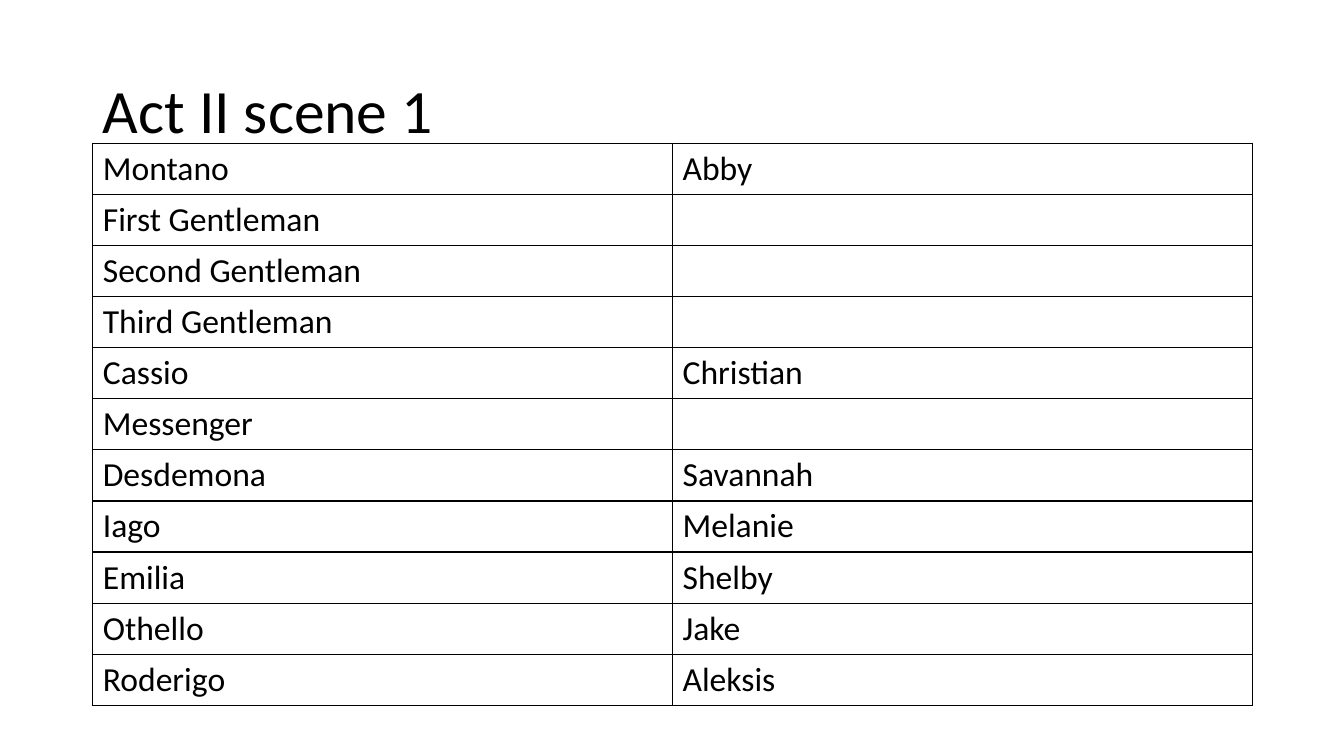
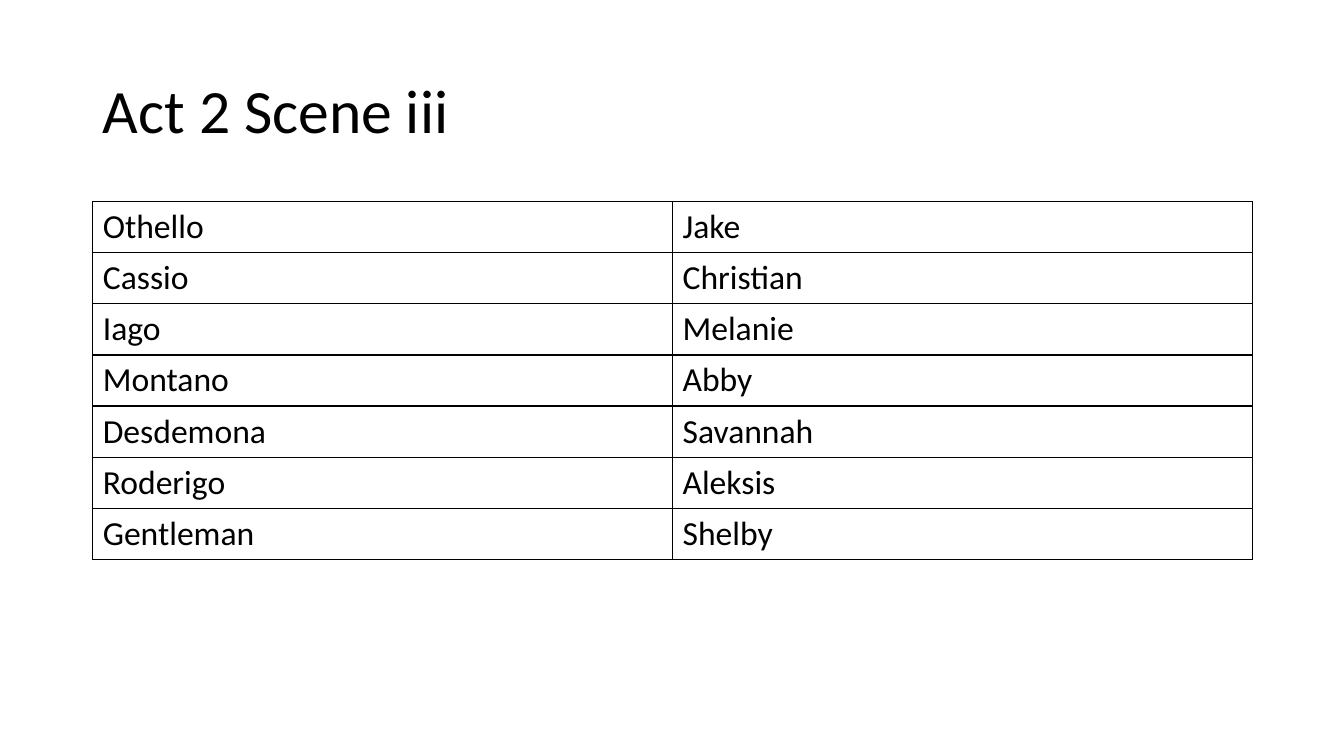
from lxml.etree import SubElement
from pptx import Presentation
from pptx.dml.color import RGBColor
from pptx.enum.text import MSO_ANCHOR, MSO_AUTO_SIZE, PP_ALIGN
from pptx.oxml.ns import qn
from pptx.util import Inches, Pt

HUES = {"ink": "000000", "paper": "FFFFFF"}
FONT = "Calibri"
WIDE, HIGH = 13.33, 7.5
LEFT, SPAN = 0.92, 11.5
ROW = 0.5

CAST = {
    "Othello": "Jake",
    "Cassio": "Christian",
    "Iago": "Melanie",
    "Montano": "Abby",
    "Desdemona": "Savannah",
    "Roderigo": "Aleksis",
    "Emilia": "Shelby",
    "Gentleman": "Shelby",
}

SCENES = [
    ("Act II scene 1", 1.42,
     ["Montano", "First Gentleman", "Second Gentleman", "Third Gentleman",
      "Cassio", "Messenger", "Desdemona", "Iago", "Emilia", "Othello",
      "Roderigo"]),
    ("Act 2 Scene iii", 2,
     ["Othello", "Cassio", "Iago", "Montano", "Desdemona", "Roderigo",
      "Gentleman"]),
]


def write(frame, text, size=24, hue="ink", lead=1.0):
    para = frame.paragraphs[0]
    para.alignment = PP_ALIGN.LEFT
    para.line_spacing = lead
    run = para.add_run()
    run.text = text
    run.font.size = Pt(size)
    run.font.name = FONT
    run.font.color.rgb = RGBColor.from_string(HUES[hue])


def border(cell, hue="ink", width=1):
    props = cell._tc.get_or_add_tcPr()
    for side in ("lnL", "lnR", "lnT", "lnB"):
        line = SubElement(props, qn(f"a:{side}"), w=str(Pt(width)))
        fill = SubElement(line, qn("a:solidFill"))
        SubElement(fill, qn("a:srgbClr"), val=HUES[hue])


def head(slide, text, box):
    title = slide.shapes.title
    title.left, title.top, title.width, title.height = map(Inches, box)
    frame = title.text_frame
    frame.word_wrap = True
    frame.auto_size = MSO_AUTO_SIZE.NONE
    frame.vertical_anchor = MSO_ANCHOR.MIDDLE
    write(frame, text, size=44, lead=0.9)


def roster(slide, roles, box):
    table = slide.shapes.add_table(len(roles), 2, *map(Inches, box)).table
    table.first_row = table.horz_banding = False
    for row, role in enumerate(roles):
        for col, text in enumerate((role, CAST.get(role))):
            cell = table.cell(row, col)
            border(cell)
            cell.fill.solid()
            cell.fill.fore_color.rgb = RGBColor.from_string(HUES["paper"])
            if text:
                write(cell.text_frame, text)


def scene(deck, name, top, roles):
    slide = deck.slides.add_slide(deck.slide_layouts[5])
    head(slide, name, (LEFT, 0.4, SPAN, 1.45))
    roster(slide, roles, (LEFT, top, SPAN, ROW * len(roles)))


def main():
    deck = Presentation()
    deck.slide_width, deck.slide_height = Inches(WIDE), Inches(HIGH)
    for name, top, roles in SCENES:
        scene(deck, name, top, roles)
    deck.save("out.pptx")


if __name__ == "__main__":
    main()
